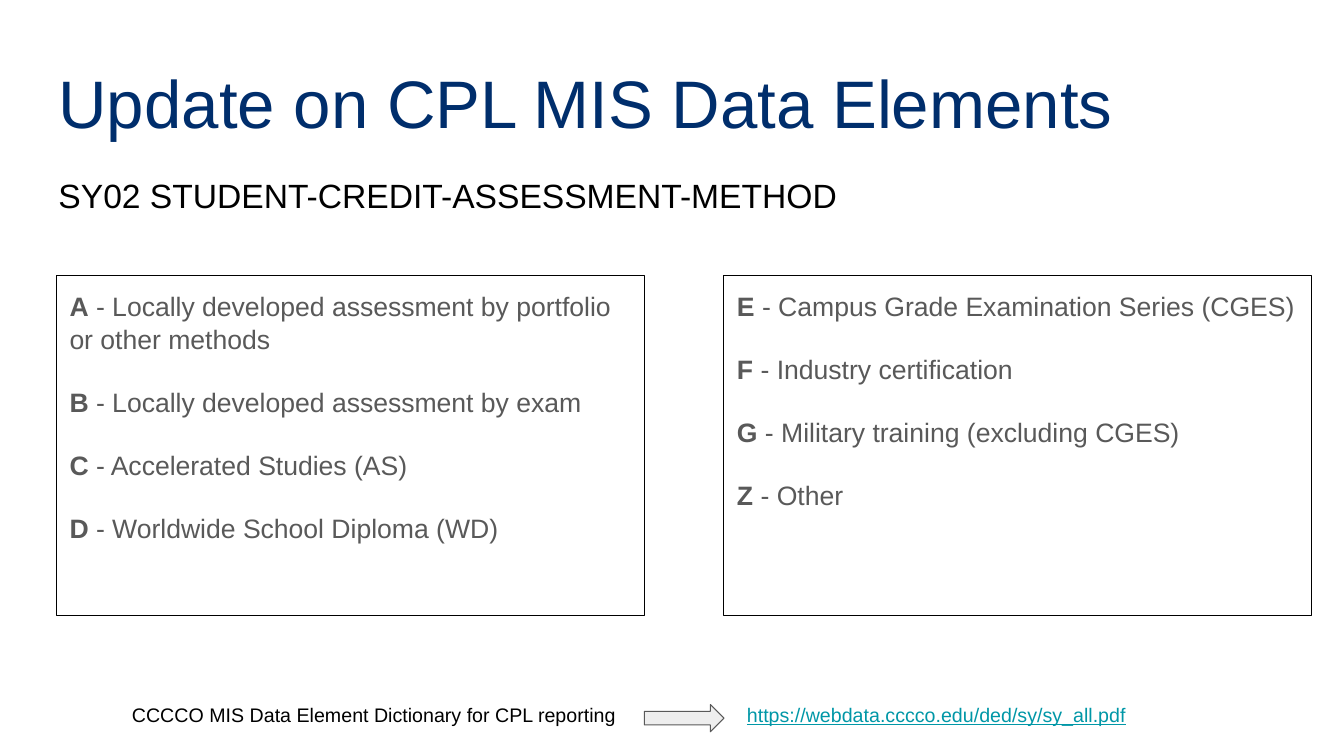
from lxml import etree
from pptx import Presentation
from pptx.dml.color import RGBColor
from pptx.enum import shapes, text
from pptx.oxml import parse_xml
from pptx.oxml.ns import nsdecls, qn
from pptx.util import Inches, Pt

NAVY = RGBColor(0x00, 0x2E, 0x6C)
BLACK = RGBColor(0x00, 0x00, 0x00)
GRAY = RGBColor(0x59, 0x59, 0x59)
TEAL = RGBColor(0x00, 0x97, 0xA7)
PALE = RGBColor(0xEE, 0xEE, 0xEE)


def add_run(paragraph, words, color, **font_format):
    run = paragraph.add_run()
    run.text = words
    run.font.color.rgb = color
    for key, value in {"name": "Arial", **font_format}.items():
        setattr(run.font, key, value)
    return run


def prepare_frame(shape, margin, margin_top):
    """Wrap the text from the top, with the given insets."""
    frame = shape.text_frame
    settings = {
        "word_wrap": True,
        "vertical_anchor": text.MSO_ANCHOR.TOP,
        "margin_left": Inches(margin),
        "margin_right": Inches(margin),
        "margin_bottom": Inches(margin),
        "margin_top": Inches(margin_top),
    }
    for key, value in settings.items():
        setattr(frame, key, value)
    return frame


prs = Presentation()
prs.slide_width, prs.slide_height = Inches(13.33), Inches(7.5)
slide = prs.slides.add_slide(prs.slide_layouts[6])

# Heading with a soft text shadow
heading = slide.shapes.add_textbox(Inches(0.45), Inches(0.4), Inches(12.42), Inches(1.95))
heading_frame = prepare_frame(heading, 0.13, 0.21)
title = heading_frame.paragraphs[0]
subtitle = heading_frame.add_paragraph()
subtitle.space_before = Pt(23.5)
for paragraph, words, color, size in (
    (title, "Update on CPL MIS Data Elements", NAVY, 48),
    (subtitle, "SY02 STUDENT-CREDIT-ASSESSMENT-METHOD", BLACK, 24),
):
    run = add_run(paragraph, words, color, size=Pt(size))
    shadow = parse_xml(
        f'<a:effectLst {nsdecls("a")}>'
        '<a:outerShdw blurRad="38100" dist="38100" dir="2700000" algn="tl">'
        '<a:srgbClr val="000000"><a:alpha val="43000"/></a:srgbClr>'
        "</a:outerShdw></a:effectLst>"
    )
    run.font.color.rgb = color
    run.font._element.find(qn("a:solidFill")).addnext(shadow)

# Dictionary reference
reference = slide.shapes.add_textbox(Inches(1.21), Inches(6.87), Inches(11.67), Inches(0.44))
source_line = prepare_frame(reference, 0.1, 0.1).paragraphs[0]
tabs = etree.SubElement(source_line._p.get_or_add_pPr(), qn("a:tabLst"))
etree.SubElement(tabs, qn("a:tab"), pos=str(Inches(6.1)), algn="l")
add_run(source_line, "CCCCO MIS Data Element Dictionary for CPL reporting\t", BLACK, size=Pt(14))
add_run(source_line, "https://webdata.cccco.edu/ded/sy/sy_all.pdf", TEAL, size=Pt(14), underline=True)

arrow = slide.shapes.add_shape(
    shapes.MSO_SHAPE.RIGHT_ARROW, Inches(6.39), Inches(6.99), Inches(0.79), Inches(0.27)
)
arrow.shadow.inherit = False
arrow.fill.solid()
arrow.fill.fore_color.rgb = PALE
arrow.line.color.rgb = GRAY
arrow.line.width = Pt(0.75)

# Assessment method codes
METHODS = (
    (0.56, (
        ("A", "Locally developed assessment by portfolio or other methods"),
        ("B", "Locally developed assessment by exam"),
        ("C", "Accelerated Studies (AS)"),
        ("D", "Worldwide School Diploma (WD)"),
    )),
    (7.18, (
        ("E", "Campus Grade Examination Series (CGES)"),
        ("F", "Industry certification"),
        ("G", "Military training (excluding CGES)"),
        ("Z", "Other"),
    )),
)
for left, methods in METHODS:
    panel = slide.shapes.add_shape(
        shapes.MSO_SHAPE.RECTANGLE, Inches(left), Inches(2.73), Inches(5.83), Inches(3.38)
    )
    panel.shadow.inherit = False
    panel.fill.background()
    panel.line.color.rgb = BLACK
    panel.line.width = Pt(0.75)
    frame = prepare_frame(panel, 0.13, 0.13)
    for index, (code, method) in enumerate(methods):
        entry = frame.add_paragraph() if index else frame.paragraphs[0]
        entry.alignment = text.PP_ALIGN.LEFT
        entry.line_spacing = 1.05
        if index:
            entry.space_before = Pt(21)
        add_run(entry, code, GRAY, size=Pt(19), bold=True)
        add_run(entry, f" - {method}", GRAY, size=Pt(19), bold=False)

prs.save("out.pptx")
